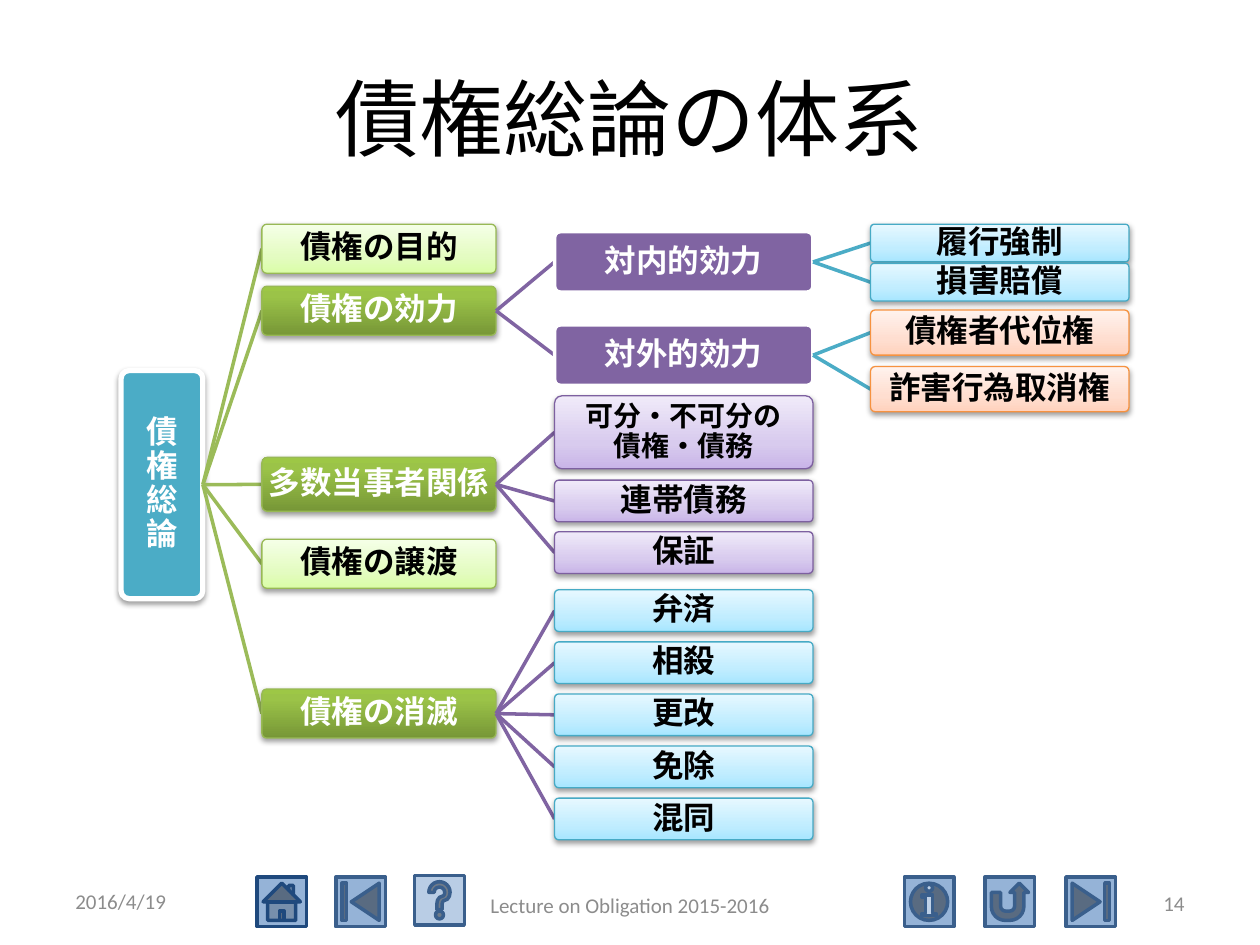
from dataclasses import dataclass

from lxml import etree
from pptx import Presentation
from pptx.dml.color import RGBColor
from pptx.enum.shapes import MSO_CONNECTOR, MSO_SHAPE
from pptx.enum.text import MSO_ANCHOR, PP_ALIGN
from pptx.oxml.ns import qn
from pptx.util import Cm, Pt

LEFT, CENTER, RIGHT = PP_ALIGN.LEFT, PP_ALIGN.CENTER, PP_ALIGN.RIGHT
MIDDLE = MSO_ANCHOR.MIDDLE
ROUND_RECT = MSO_SHAPE.ROUNDED_RECTANGLE
STRAIGHT = MSO_CONNECTOR.STRAIGHT
HOME = MSO_SHAPE.ACTION_BUTTON_HOME
BEGINNING = MSO_SHAPE.ACTION_BUTTON_BEGINNING
HELP = MSO_SHAPE.ACTION_BUTTON_HELP
INFORMATION = MSO_SHAPE.ACTION_BUTTON_INFORMATION
RETURN = MSO_SHAPE.ACTION_BUTTON_RETURN
END = MSO_SHAPE.ACTION_BUTTON_END

FONT = "Calibri"
COLUMNS = [(2.44, 1.65), (5.28, 4.72), (11.18, 5.21), (17.55, 5.21)]
LINK_COLORS = [None, "9BBB59", "8064A2", "4BACC6"]


@dataclass
class Style:
    fill: object
    line: str
    width: float = 0.75
    color: str = "000000"
    shadow: bool = True


ROOT = Style("4BACC6", "FFFFFF", 3, "FFFFFF")
PURPLE = Style("8064A2", "FFFFFF", 2, "FFFFFF", False)
GREEN = Style([(0, "779737"), (80, "9BC348"), (100, "9DC746")], "98B955", color="FFFFFF")
PALE_GREEN = Style([(0, "DAFDA7"), (35, "E4FCC2"), (100, "F5FFE7")], "98B955")
PALE_BLUE = Style([(0, "A7E6FF"), (35, "C1EDFF"), (100, "E7F8FF")], "46AAC5")
PALE_ORANGE = Style([(0, "FFD2BD"), (35, "FFDED0"), (100, "FFF2ED")], "F69240")
PALE_PURPLE = Style([(0, "C9B5E8"), (35, "D8CBEE"), (100, "F0EAF9")], "7D60A0")


@dataclass
class Node:
    text: str
    style: Style
    top: float
    height: float
    children: tuple = ()
    size: int = 18

    @property
    def middle(self):
        return self.top + self.height / 2


ENDINGS = ["弁済", "相殺", "更改", "免除", "混同"]
TREE = Node("債\n権\n総\n論", ROOT, 7.47, 4.6, (
    Node("債権の目的", PALE_GREEN, 4.52, 0.99),
    Node("債権の効力", GREEN, 5.77, 0.99, (
        Node("対内的効力", PURPLE, 4.67, 1.22, (
            Node("履行強制", PALE_BLUE, 4.52, 0.76),
            Node("損害賠償", PALE_BLUE, 5.31, 0.76))),
        Node("対外的効力", PURPLE, 6.55, 1.22, (
            Node("債権者代位権", PALE_ORANGE, 6.25, 0.91),
            Node("詐害行為取消権", PALE_ORANGE, 7.39, 0.91))))),
    Node("多数当事者関係", GREEN, 9.22, 1.09, (
        Node("可分・不可分の\n債権・債務", PALE_PURPLE, 7.98, 1.47, size=16),
        Node("連帯債務", PALE_PURPLE, 9.68, 0.84),
        Node("保証", PALE_PURPLE, 10.72, 0.84))),
    Node("債権の譲渡", PALE_GREEN, 10.87, 0.99),
    Node("債権の消滅", GREEN, 13.89, 0.99, tuple(
        Node(text, PALE_BLUE, 11.89 + 1.05 * i, 0.84) for i, text in enumerate(ENDINGS))),
))


def rgb(value):
    return RGBColor.from_string(value)


def write(tf, text, size=18, color="000000", bold=False, align=CENTER, spacing=None, inset=None):
    tf.word_wrap = True
    tf.vertical_anchor = MIDDLE
    if inset is not None:
        tf.margin_left = tf.margin_right = tf.margin_top = tf.margin_bottom = Cm(inset)
    p = tf.paragraphs[0]
    p.text = text
    p.alignment = align
    p.line_spacing = spacing
    for r in p.runs:
        r.font.name = FONT
        r.font.size = Pt(size)
        r.font.bold = bold
        r.font.color.rgb = rgb(color)


def add_label(slide, x, y, w, h, text, **fmt):
    s = slide.shapes.add_textbox(Cm(x), Cm(y), Cm(w), Cm(h))
    write(s.text_frame, text, **fmt)


def fill_gradient(s, stops):
    s.fill.gradient()
    s.fill.gradient_angle = 90
    gs_list = s.element.spPr.find(qn("a:gradFill")).find(qn("a:gsLst"))
    gs_list.clear()
    for pos, color in stops:
        gs = etree.SubElement(gs_list, qn("a:gs"), pos=str(pos * 1000))
        etree.SubElement(gs, qn("a:srgbClr"), val=color)


def add_shadow(s):
    effects = s.element.spPr.find(qn("a:effectLst"))
    shadow = etree.SubElement(effects, qn("a:outerShdw"), blurRad="40000", dist="20000",
                              dir="5400000", rotWithShape="0")
    color = etree.SubElement(shadow, qn("a:srgbClr"), val="000000")
    etree.SubElement(color, qn("a:alpha"), val="38000")


def add_shape(slide, kind, x, y, w, h, fill, line, width):
    s = slide.shapes.add_shape(kind, Cm(x), Cm(y), Cm(w), Cm(h))
    s.shadow.inherit = False
    if isinstance(fill, str):
        s.fill.solid()
        s.fill.fore_color.rgb = rgb(fill)
    else:
        fill_gradient(s, fill)
    s.line.color.rgb = rgb(line)
    s.line.width = Pt(width)
    return s


def add_link(slide, x1, y1, x2, y2, color):
    s = slide.shapes.add_connector(STRAIGHT, Cm(x1), Cm(y1), Cm(x2), Cm(y2))
    s.line.color.rgb = rgb(color)
    s.line.width = Pt(2)
    etree.SubElement(s.element.spPr, qn("a:effectLst"))


def add_node(slide, node, level=0):
    x, w = COLUMNS[level]
    style = node.style
    s = add_shape(slide, ROUND_RECT, x, node.top, w, node.height,
                  style.fill, style.line, style.width)
    s.adjustments[0] = 0.1
    if style.shadow:
        add_shadow(s)
    write(s.text_frame, node.text, size=node.size, color=style.color, bold=True,
          spacing=0.9, inset=0.03)
    for child in node.children:
        add_link(slide, x + w, node.middle, COLUMNS[level + 1][0], child.middle,
                 LINK_COLORS[level + 1])
        add_node(slide, child, level + 1)


def add_button(slide, kind, x, y=17.68, fill="95B3D7", line="3A5F8C"):
    add_shape(slide, kind, x, y, 1, 1, fill, line, 2)


def main():
    prs = Presentation()
    prs.slide_width, prs.slide_height = Cm(25.4), Cm(19.05)
    slide = prs.slides.add_slide(prs.slide_layouts[6])

    add_button(slide, HOME, 5.18, line="1F497D")
    add_button(slide, BEGINNING, 6.77)
    add_button(slide, HELP, 8.36, y=17.65, fill="B9CDE5")
    for i, kind in enumerate([INFORMATION, RETURN, END]):
        add_button(slide, kind, 18.23 + 1.63 * i)

    add_label(slide, 1.27, 0.76, 22.86, 3.18, "債権総論の体系", size=48)
    footer = {"size": 12, "color": "8C8C8C"}
    add_label(slide, 1.27, 17.65, 5.92, 1.02, "2016/4/19", align=LEFT, **footer)
    add_label(slide, 8.68, 17.73, 8.04, 1.02, "Lecture on Obligation 2015-2016", **footer)
    add_label(slide, 18.21, 17.7, 5.92, 1.02, "14", align=RIGHT, **footer)

    add_node(slide, TREE)
    prs.save("out.pptx")


if __name__ == "__main__":
    main()
